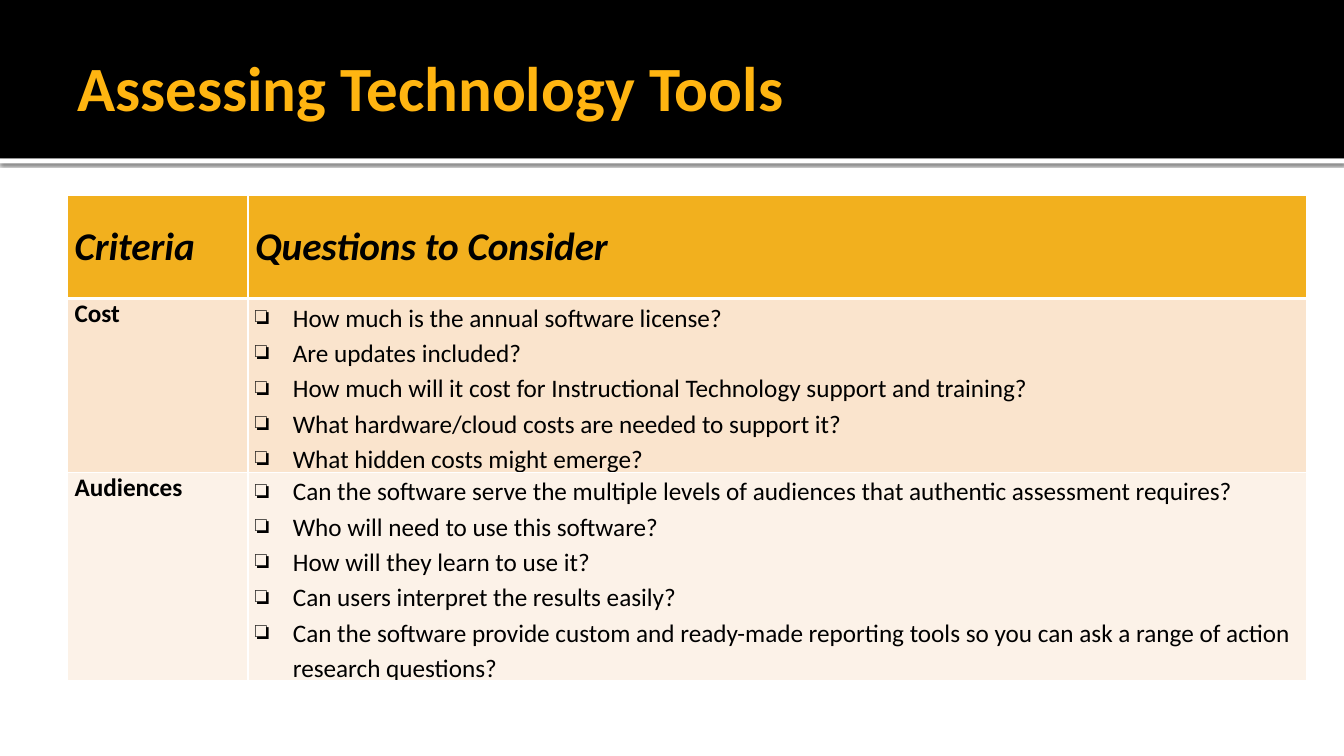
from lxml.etree import SubElement
from pptx import Presentation
from pptx.dml.color import RGBColor
from pptx.enum.shapes import MSO_SHAPE as Shape
from pptx.enum.text import MSO_ANCHOR as Anchor
from pptx.oxml.ns import qn
from pptx.util import Cm, Pt

BLACK = RGBColor(0x00, 0x00, 0x00)
WHITE = RGBColor(0xFF, 0xFF, 0xFF)
TITLE_GOLD = RGBColor(0xFF, 0xB5, 0x11)
HEADER_GOLD = RGBColor(0xF2, 0xB0, 0x1E)
PEACH = RGBColor(0xFA, 0xE4, 0xCD)
CREAM = RGBColor(0xFC, 0xF2, 0xE8)

HEADINGS = ("Criteria", "Questions to Consider")
CRITERIA = [
    ("Cost", PEACH, [
        "How much is the annual software license?",
        "Are updates included?",
        "How much will it cost for Instructional Technology support and training?",
        "What hardware/cloud costs are needed to support it?",
        "What hidden costs might emerge?",
    ]),
    ("Audiences", CREAM, [
        "Can the software serve the multiple levels of audiences that authentic assessment requires?",
        "Who will need to use this software?",
        "How will they learn to use it?",
        "Can users interpret the results easily?",
        "Can the software provide custom and ready-made reporting tools "
        "so you can ask a range of action research questions?",
    ]),
]


class SlideBuilder:
    """Holds the text style and the current slide, and adds its elements."""

    font_name = "Calibri"
    body_size = 18
    indent = Cm(0.95)

    def __init__(self, deck):
        self.slide = deck.slides.add_slide(deck.slide_layouts[6])

    def style(self, para, size, color=BLACK, bold=False, italic=False):
        for span in para.runs:
            font = span.font
            font.name, font.size = self.font_name, Pt(size)
            font.bold, font.italic = bold, italic
            font.color.rgb = color

    def band(self, top, height, color, shadowed=False):
        box = self.slide.shapes.add_shape(Shape.RECTANGLE, 0, Cm(top), Cm(33.87), Cm(height))
        box.fill.solid()
        box.fill.fore_color.rgb = color
        box.line.fill.background()
        box.shadow.inherit = False
        if shadowed:
            effects = box.element.spPr.find(qn("a:effectLst"))
            shadow = SubElement(effects, qn("a:outerShdw"), blurRad=str(Pt(2.5)),
                                dist=str(Pt(0.8)), dir="5400000", rotWithShape="0")
            shade = SubElement(shadow, qn("a:srgbClr"), val=str(BLACK))
            SubElement(shade, qn("a:alpha"), val="60000")

    def title(self, text):
        box = self.slide.shapes.add_textbox(Cm(1.7), Cm(0.43), Cm(30.48), Cm(3.48))
        frame = box.text_frame
        frame.word_wrap = True
        frame.vertical_anchor = Anchor.MIDDLE
        frame.margin_left = Cm(0.25)
        frame.margin_right = frame.margin_top = frame.margin_bottom = Cm(0.13)
        frame.text = text
        self.style(frame.paragraphs[0], 45, TITLE_GOLD, bold=True)

    def table(self, left, top, height, widths, heights):
        holder = self.slide.shapes.add_table(
            len(heights), len(widths), Cm(left), Cm(top), Cm(sum(widths)), Cm(height))
        for column, width in zip(holder.table.columns, widths):
            column.width = Cm(width)
        for row, row_height in zip(holder.table.rows, heights):
            row.height = Cm(row_height)
        holder.height = Cm(height)
        return holder.table

    def cell(self, cell, color, top_line=1, bottom_line=1):
        cell.margin_left = cell.margin_right = Cm(0.18)
        cell.margin_top = cell.margin_bottom = 0
        properties = cell._tc.get_or_add_tcPr()
        for side, width in zip("LRTB", (1, 1, top_line, bottom_line)):
            line = SubElement(properties, qn(f"a:ln{side}"), w=str(Pt(width)))
            paint = SubElement(line, qn("a:solidFill"))
            SubElement(paint, qn("a:srgbClr"), val=str(WHITE))
        cell.fill.solid()
        cell.fill.fore_color.rgb = color

    def label(self, cell, text, size, italic=False):
        cell.text_frame.text = text
        para = cell.text_frame.paragraphs[0]
        para.space_before = para.space_after = Pt(6)
        self.style(para, size, bold=True, italic=italic)

    def checklist(self, cell, questions):
        cell.text_frame.text = "\n".join(questions)
        for para in cell.text_frame.paragraphs:
            para.line_spacing = 1.15
            properties = para._p.get_or_add_pPr()
            properties.set("marL", str(self.indent))
            properties.set("indent", str(-self.indent))
            SubElement(properties, qn("a:buChar"), char="❏")
            self.style(para, self.body_size)


def main():
    deck = Presentation()
    deck.slide_width, deck.slide_height = Cm(33.87), Cm(19.05)
    builder = SlideBuilder(deck)
    builder.band(3.99, 0.13, WHITE, shadowed=True)
    builder.band(0, 3.99, BLACK)
    builder.title("Assessing Technology Tools")

    table = builder.table(1.7, 4.93, 12.22, (4.55, 26.67), (2.59, 3.25, 3.12))
    for column, heading in enumerate(HEADINGS):
        cell = table.cell(0, column)
        builder.cell(cell, HEADER_GOLD, bottom_line=3)
        cell.vertical_anchor = Anchor.MIDDLE
        builder.label(cell, heading, 28, italic=True)
    for row, (criterion, color, questions) in enumerate(CRITERIA, 1):
        name_cell, question_cell = table.cell(row, 0), table.cell(row, 1)
        for cell in (name_cell, question_cell):
            builder.cell(cell, color, top_line=3 if row == 1 else 1)
        builder.label(name_cell, criterion, builder.body_size)
        builder.checklist(question_cell, questions)
    deck.save("out.pptx")


if __name__ == "__main__":
    main()
